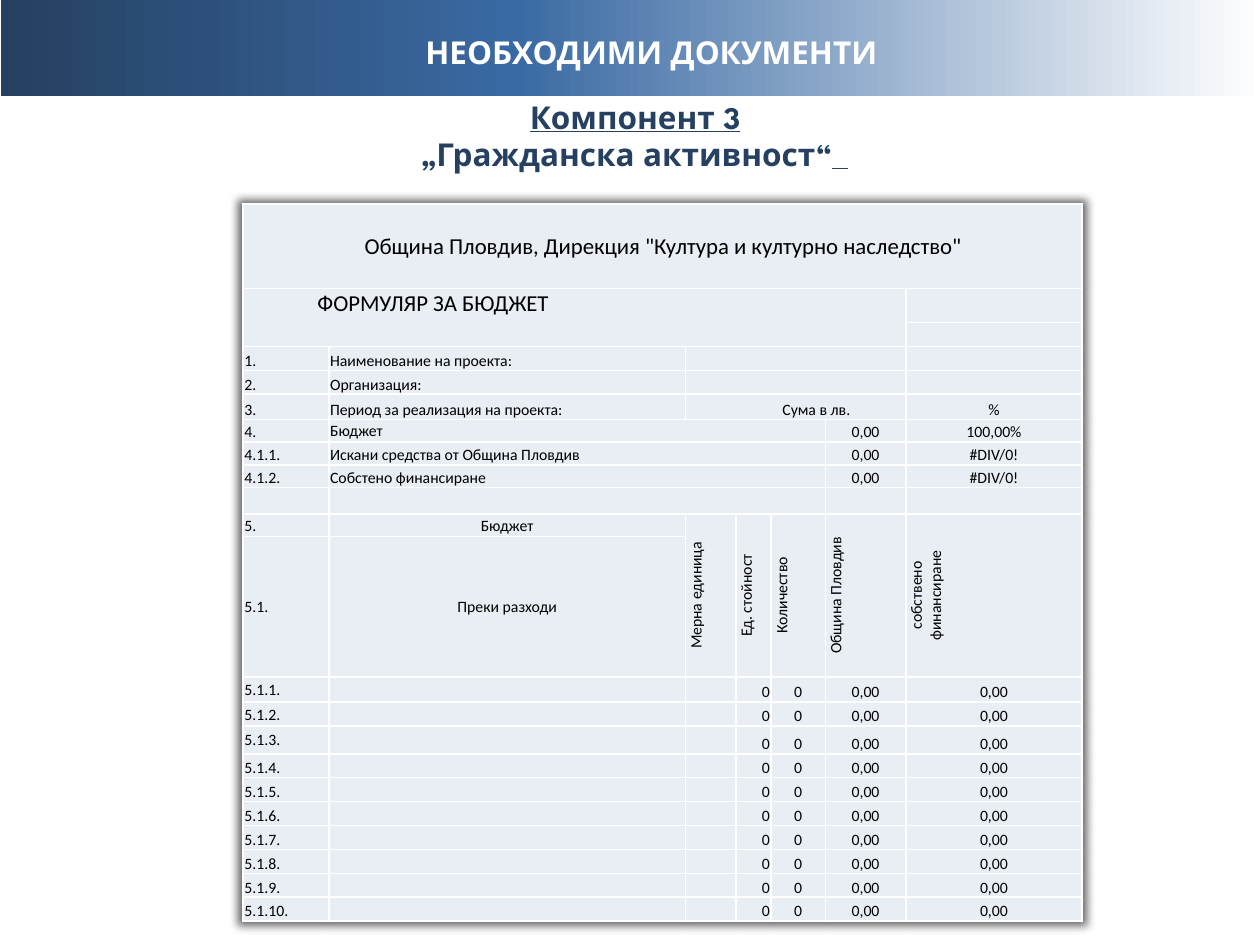
from typing import NamedTuple

from lxml.etree import SubElement
from pptx import Presentation
from pptx.dml.color import RGBColor
from pptx.enum.shapes import MSO_SHAPE
from pptx.enum.text import MSO_ANCHOR, PP_ALIGN
from pptx.oxml import parse_xml
from pptx.oxml.ns import qn
from pptx.util import Inches, Pt

WIDE, HIGH = 10, 7.5
NAVY, BLUE, WHITE, BLACK, PALE = "254061", "3A6AA3", "FFFFFF", "000000", "E9EDF4"
HEAD, BODY = "League Spartan", "Calibri"
LEFT, MID, RIGHT = PP_ALIGN.LEFT, PP_ALIGN.CENTER, PP_ALIGN.RIGHT
TOP, CORE, LOW = MSO_ANCHOR.TOP, MSO_ANCHOR.MIDDLE, MSO_ANCHOR.BOTTOM
COLS = [0.68, 2.83, 0.4, 0.28, 0.43, 0.6, 1.4]
ROWS = [0.67, 0.27, 0.19, 0.19, 0.19, 0.2, 0.18, 0.18, 0.18, 0.21, 0.18, 1.02,
        0.2, 0.19, 0.22] + [0.19] * 7
COST = 12  # first row of the cost lines


class Entry(NamedTuple):
    row: int
    col: int
    text: str
    align: PP_ALIGN = LEFT
    anchor: MSO_ANCHOR = LOW
    size: int = 9
    indent: float = 0.01
    turned: bool = False


class Span(NamedTuple):
    row: int
    col: int
    rows: int
    cols: int


SPANS = [Span(0, 0, 1, 7), Span(1, 0, 2, 6)]
SPANS += [Span(row, 2, 1, 4) for row in (3, 4, 5)]
SPANS += [Span(row, 1, 1, 4) for row in range(6, 10)]
SPANS += [Span(10, col, 2, 1) for col in range(2, 7)]


def list_entries() -> list[Entry]:
    items = [
        Entry(0, 0, 'Община Пловдив, Дирекция "Култура и културно наследство"',
              MID, CORE, 13),
        Entry(1, 0, "ФОРМУЛЯР ЗА БЮДЖЕТ", LEFT, TOP, 13, 0.59),
        Entry(5, 2, "Сума в лв.", indent=0.77),
        Entry(5, 6, "%", MID),
        Entry(10, 0, "5.", anchor=CORE),
        Entry(10, 1, "Бюджет", MID, CORE),
        Entry(11, 0, "5.1.", anchor=CORE),
        Entry(11, 1, "Преки разходи", MID, CORE),
    ]
    names = ["Наименование на проекта:", "Организация:",
             "Период за реализация на проекта:", "Бюджет",
             "Искани средства от Община Пловдив", "Собстено финансиране"]
    marks = ["1.", "2.", "3.", "4.", "4.1.1.", "4.1.2."]
    for row, (mark, name) in enumerate(zip(marks, names), 3):
        items += [Entry(row, 0, mark),
                  Entry(row, 1, name, anchor=CORE if row == 6 else LOW)]
    for row, share in enumerate(["100,00%", "#DIV/0!", "#DIV/0!"], 6):
        items += [Entry(row, 5, "0,00", MID), Entry(row, 6, share, MID)]
    heads = ["Мерна единица", "Ед. стойност", "Количество", "Община Пловдив",
             "собствено финансиране"]
    items += [Entry(10, col, head, MID, CORE, turned=True)
              for col, head in enumerate(heads, 2)]
    for num in range(1, 11):
        row = COST + num - 1
        items.append(Entry(row, 0, f"5.1.{num}.", anchor=CORE if num < 4 else LOW))
        items.append(Entry(row, 3, "0", RIGHT))
        items += [Entry(row, col, text, MID)
                  for col, text in enumerate(["0", "0,00", "0,00"], 4)]
    return items


def paint(target, color: str) -> None:
    target.solid()
    target.fore_color.rgb = RGBColor.from_string(color)


def style(font, name: str, size: int, color: str, bold: bool = False) -> None:
    font.name, font.size, font.bold = name, Pt(size), bold
    font.color.rgb = RGBColor.from_string(color)


def place(shape, left: float, top: float, width: float, height: float) -> None:
    shape.left, shape.top = Inches(left), Inches(top)
    shape.width, shape.height = Inches(width), Inches(height)


def draw_banner(slide) -> None:
    bar = slide.shapes.add_shape(MSO_SHAPE.RECTANGLE, Inches(0.01), 0,
                                 Inches(WIDE), Inches(0.76))
    bar.shadow.inherit = False
    bar.line.fill.background()
    bar.fill.gradient()
    bar.fill.gradient_angle = 0
    stops = next(bar._element.spPr.iter(qn("a:gsLst")))
    for stop in list(stops):
        stops.remove(stop)
    for share, color in ((0, NAVY), (41, BLUE), (100, WHITE)):
        stop = SubElement(stops, qn("a:gs"), pos=str(share * 1000))
        SubElement(stop, qn("a:srgbClr"), val=color)

    box = slide.shapes.add_textbox(0, 0, 0, 0)
    place(box, 0.67, 0.29, 0.9 * WIDE, 0.54)
    frame = box.text_frame
    frame.word_wrap, frame.vertical_anchor = True, CORE
    frame.margin_top, frame.margin_bottom = 0, Inches(0.3)
    para = frame.paragraphs[0]
    para.text, para.alignment = "НЕОБХОДИМИ ДОКУМЕНТИ", MID
    style(para.font, HEAD, 18, WHITE, True)


def draw_title(slide) -> None:
    title = slide.shapes.title
    place(title, 0.54, 0.76, 0.9 * WIDE, 0.63)
    frame = title.text_frame
    frame.word_wrap, frame.vertical_anchor = True, CORE
    para = frame.paragraphs[0]
    para.alignment = MID
    for text, lined in (("Компонент 3", True), ("„Гражданска активност“", False),
                        ("  ", True)):
        run = para.add_run()
        run.text = text
        style(run.font, HEAD, 18, NAVY, True)
        run.font.underline = lined
        if text == "Компонент 3":
            para.add_line_break()


def dress(cell) -> None:
    """Give a cell its white borders, pale fill, thin margins and small type."""
    props = cell._tc.get_or_add_tcPr()
    for side in ("lnL", "lnR", "lnT", "lnB"):
        line = SubElement(props, qn(f"a:{side}"), w=str(Pt(1)))
        SubElement(SubElement(line, qn("a:solidFill")), qn("a:srgbClr"), val=WHITE)
    paint(cell.fill, PALE)
    cell.margin_left = cell.margin_right = cell.margin_top = Inches(0.01)
    cell.margin_bottom = 0
    para = cell.text_frame.paragraphs[0]
    SubElement(para._p, qn("a:endParaRPr"), sz="900")


def write(cell, item: Entry) -> None:
    para = cell.text_frame.paragraphs[0]
    para.text, para.alignment = item.text, item.align
    style(para.font, BODY, item.size, BLACK)
    cell.vertical_anchor, cell.margin_left = item.anchor, Inches(item.indent)
    if item.turned:
        cell._tc.get_or_add_tcPr().set("vert", "vert270")


def draw_table(slide) -> None:
    frame = slide.shapes.add_table(len(ROWS), len(COLS), Inches(1.93), Inches(1.62),
                                   Inches(sum(COLS)), Inches(sum(ROWS)))
    table = frame.table
    table.first_row = table.horz_banding = False
    table._tbl.tblPr.insert(0, parse_xml(
        '<a:effectLst xmlns:a="http://schemas.openxmlformats.org/drawingml/2006/main">'
        '<a:outerShdw blurRad="63500" sx="101000" sy="101000" algn="ctr" rotWithShape="0">'
        '<a:srgbClr val="000000"><a:alpha val="60000"/></a:srgbClr>'
        '</a:outerShdw></a:effectLst>'))
    for col, width in zip(table.columns, COLS):
        col.width = Inches(width)
    for row, height in zip(table.rows, ROWS):
        row.height = Inches(height)
    for cell in table.iter_cells():
        dress(cell)
    for span in SPANS:
        end = table.cell(span.row + span.rows - 1, span.col + span.cols - 1)
        table.cell(span.row, span.col).merge(end)
    for item in list_entries():
        write(table.cell(item.row, item.col), item)


def main() -> None:
    deck = Presentation()
    deck.slide_width, deck.slide_height = Inches(WIDE), Inches(HIGH)
    slide = deck.slides.add_slide(deck.slide_layouts[5])
    draw_banner(slide)
    draw_title(slide)
    draw_table(slide)
    deck.save("out.pptx")


if __name__ == "__main__":
    main()
